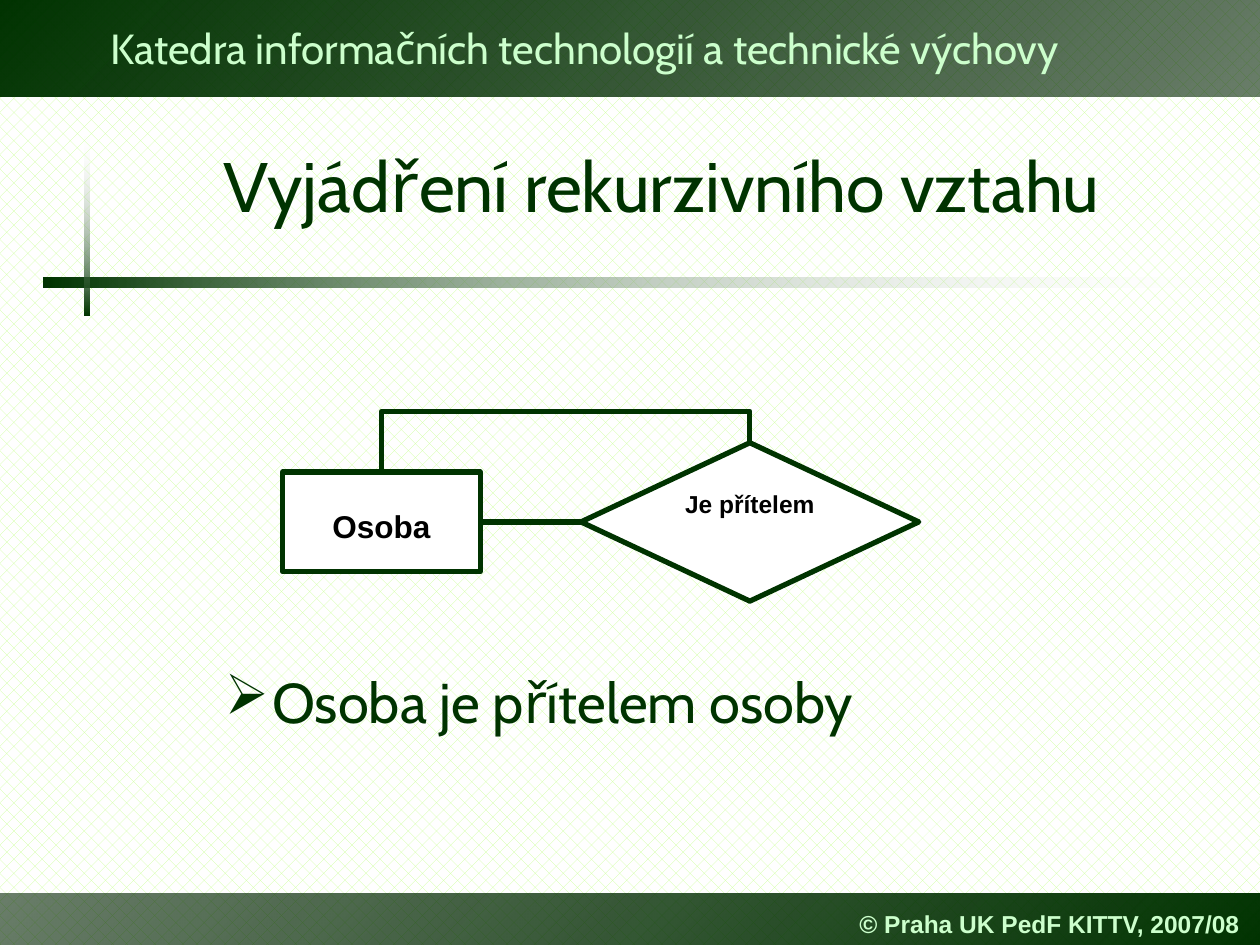
from lxml.etree import SubElement as Sub
from pptx import Presentation
from pptx.dml.color import RGBColor as RGB
from pptx.enum.dml import MSO_PATTERN as Pat
from pptx.enum.shapes import MSO_CONNECTOR as Conn, MSO_SHAPE as Kind
from pptx.enum.text import MSO_ANCHOR as Anchor, PP_ALIGN as Align
from pptx.oxml.ns import qn
from pptx.util import Pt

GREEN = RGB(0x00, 0x33, 0x00)
DEEP = RGB(0x00, 0x24, 0x00)
MINT = RGB(0xCC, 0xFF, 0xCC)
LIME = RGB(0xCC, 0xFF, 0x99)
WHITE = RGB(0xFF, 0xFF, 0xFF)
BLACK = RGB(0x00, 0x00, 0x00)

HEAD = dict(name="Cabin", size=Pt(24))
FOOT = dict(name="Arial", size=Pt(14), bold=True)
TITLE = dict(name="Cabin", size=Pt(40))
BODY = dict(name="Cabin", size=Pt(32))
ENTITY = dict(name="Arial", size=Pt(18), bold=True)
RELATION = dict(name="Arial", size=Pt(14), bold=True)


def pts(box):
    return [Pt(v) for v in box]


def write(frame, text, form, color, align=Align.LEFT):
    para = frame.paragraphs[0]
    para.alignment = align
    run = para.add_run()
    run.text = text
    for key, value in form.items():
        setattr(run.font, key, value)
    run.font.color.rgb = color
    return run


def label(slide, box, text, form, color, wrap=False):
    frame = slide.shapes.add_textbox(*pts(box)).text_frame
    frame.word_wrap = wrap
    return frame, write(frame, text, form, color)


def band(slide, box, stops, angle=0, turn=0):
    """Add a gradient bar; stops are (colour, opacity in percent)."""
    bar = slide.shapes.add_shape(Kind.RECTANGLE, *pts(box))
    bar.shadow.inherit = False
    bar.line.fill.background()
    bar.rotation = turn
    bar.fill.gradient()
    bar.fill.gradient_angle = angle
    for stop, (color, alpha) in zip(bar.fill.gradient_stops, stops):
        stop.color.rgb = color
        if alpha < 100:
            tone = stop._gs.find(qn("a:srgbClr"))
            Sub(tone, qn("a:alpha")).set("val", str(alpha * 1000))


def cast(run):
    """Give the text of a run a soft shadow."""
    fill = run._r.rPr.find(qn("a:solidFill"))
    effects = fill.makeelement(qn("a:effectLst"), {})
    fill.addnext(effects)
    shade = Sub(effects, qn("a:outerShdw"), dist="35921", dir="2700000")
    Sub(shade, qn("a:srgbClr"), val=str(DEEP))


def frame_bands(slide, width, height):
    fade = [(DEEP, 59), (GREEN, 100)]
    band(slide, (0, height - 29.5, width, 32), fade, 315)
    band(slide, (0, 0, width, 55), fade, 315, 180)
    cast(label(slide, (56, 9.5, 581, 36),
               "Katedra informačních technologií a technické výchovy",
               HEAD, MINT)[1])
    frame, _ = label(slide, (484, height - 24, 236, 24),
                     "© Praha UK PedF KITTV, 2007/08", FOOT, MINT)
    frame.vertical_anchor = Anchor.MIDDLE


def heading(slide, box, text):
    x, y, w, h = box
    fade = [(GREEN, 100), (WHITE, 0)]
    band(slide, (x - 29, y + h + 8, 683, 6), fade)
    band(slide, (x - 55.8, y + 66.6, 103, 3.2), fade, turn=270)
    title = slide.shapes.title
    title.left, title.top, title.width, title.height = pts(box)
    title.text_frame.vertical_anchor = Anchor.MIDDLE
    write(title.text_frame, text, TITLE, GREEN, Align.CENTER)


def node(slide, kind, box, text, form, top):
    shape = slide.shapes.add_shape(kind, *pts(box))
    shape.shadow.inherit = False
    shape.fill.solid()
    shape.fill.fore_color.rgb = WHITE
    shape.line.color.rgb = GREEN
    shape.line.width = Pt(3)
    frame = shape.text_frame
    frame.vertical_anchor = Anchor.TOP
    frame.margin_top = Pt(top)
    write(frame, text, form, BLACK, Align.CENTER)
    return shape


def link(slide, kind, ends):
    line = slide.shapes.add_connector(kind, *pts(ends))
    line.line.color.rgb = GREEN
    line.line.width = Pt(3)
    Sub(line._element.spPr, qn("a:effectLst"))
    return line


def loop(slide, start, end, rise):
    """Lead an elbow up from start, across and down to end."""
    (sx, sy), (ex, ey) = start, end
    run, drop = sx - ex, ey - sy
    cx, cy = (sx + ex) / 2, (sy + ey) / 2
    line = link(slide, Conn.ELBOW, (cx + drop / 2, cy + run / 2,
                                    cx - drop / 2, cy - run / 2))
    props = line._element.spPr
    props.find(qn("a:xfrm")).set("rot", str(270 * 60000))
    guides = props.find(qn("a:prstGeom")).find(qn("a:avLst"))
    value = round(-rise / drop * 100000)
    Sub(guides, qn("a:gd"), name="adj1", fmla=f"val {value}")


def diagram(slide, box):
    x, y, w, h = box
    mid = y + h / 2
    person = node(slide, Kind.RECTANGLE, (x, mid - 28.5, 113, 57),
                  "Osoba", ENTITY, 20)
    friend = node(slide, Kind.DIAMOND, (x + w - 193, y, 193, h),
                  "Je přítelem", RELATION, 3.6)
    line = link(slide, Conn.STRAIGHT, (x + 113, mid, x + w - 193, mid))
    line.begin_connect(person, 3)
    line.end_connect(friend, 1)
    loop(slide, (x + w - 96.5, y), (x + 56.5, mid - 28.5), 18)


def bullet(slide, box, text):
    frame, _ = label(slide, box, text, BODY, GREEN, True)
    props = frame.paragraphs[0]._p.get_or_add_pPr()
    props.set("marL", str(Pt(27)))
    props.set("indent", str(-Pt(27)))
    Sub(Sub(props, qn("a:buClr")), qn("a:srgbClr"), val=str(GREEN))
    Sub(props, qn("a:buChar"), char="➢")


def main():
    deck = Presentation()
    deck.slide_width, deck.slide_height = Pt(720), Pt(540)
    slide = deck.slides.add_slide(deck.slide_layouts[5])
    back = slide.background.fill
    back.patterned()
    back.pattern = Pat.PERCENT_25
    back.fore_color.rgb = LIME
    back.back_color.rgb = WHITE
    frame_bands(slide, 720, 540)
    heading(slide, (54, 60.5, 648, 90), "Vyjádření rekurzivního vztahu")
    diagram(slide, (161.5, 253, 363.5, 90.5))
    bullet(slide, (121.5, 378, 471, 68), "Osoba je přítelem osoby")
    deck.save("out.pptx")


if __name__ == "__main__":
    main()
